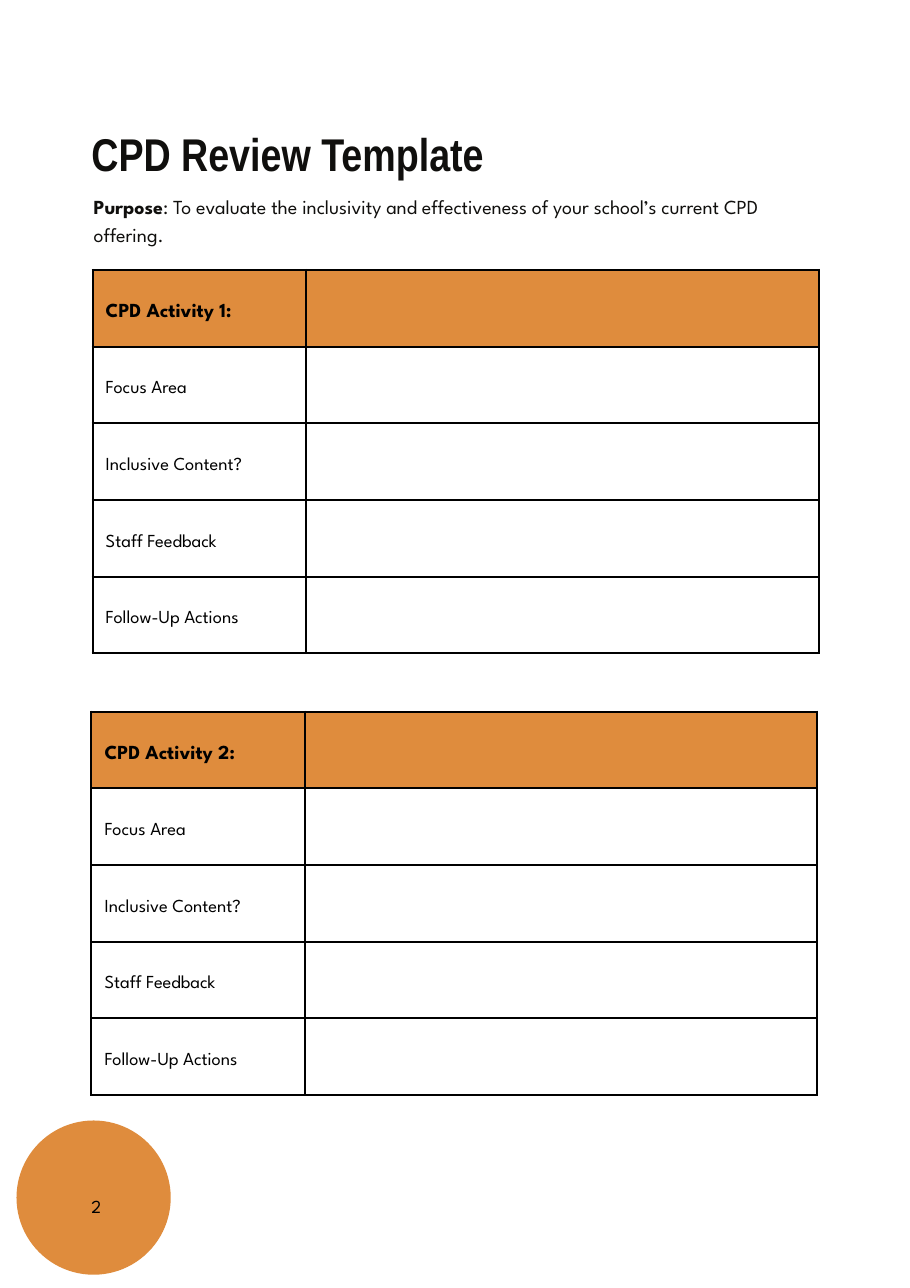
from lxml.etree import SubElement
from pptx import Presentation
from pptx.dml.color import RGBColor
from pptx.enum.shapes import MSO_SHAPE as Shape
from pptx.enum.text import MSO_ANCHOR as Anchor
from pptx.oxml.ns import qn
from pptx.util import Inches, Pt

ORANGE, BLACK, INK = "DF8C3D", "000000", "100F0D"
TITLE_FONT, BODY_FONT = "Arial Narrow", "League Spartan"
REVIEW_ROWS = ["Focus Area", "Inclusive Content?", "Staff Feedback", "Follow-Up Actions"]


def color(value):
    return RGBColor.from_string(value)


class ReviewPage:
    column_widths = (1.94, 4.65)
    table_height = 3.48
    cell_margin = 0.12
    border_width = 1.5

    def __init__(self, slide):
        self.slide = slide

    def style(self, paragraph, size, spacing, font=BODY_FONT, ink=BLACK, bold=None):
        paragraph.line_spacing = Pt(spacing)
        paragraph.font.name = font
        paragraph.font.size = Pt(size)
        paragraph.font.color.rgb = color(ink)
        paragraph.font.bold = bold

    def text(self, box, runs, size, spacing, **style):
        """Runs are pairs of wording and bold."""
        shape = self.slide.shapes.add_textbox(*map(Inches, box))
        frame = shape.text_frame
        frame.word_wrap = True
        frame.margin_left = frame.margin_right = 0
        frame.margin_top = frame.margin_bottom = 0
        paragraph = frame.paragraphs[0]
        self.style(paragraph, size, spacing, **style)
        for wording, bold in runs:
            run = paragraph.add_run()
            run.text = wording
            run.font.bold = bold

    def circle(self, left, top, size):
        shape = self.slide.shapes.add_shape(
            Shape.OVAL, Inches(left), Inches(top), Inches(size), Inches(size))
        shape.shadow.inherit = False
        shape.fill.solid()
        shape.fill.fore_color.rgb = color(ORANGE)
        shape.line.fill.background()

    def borders(self, cell):
        properties = cell._tc.get_or_add_tcPr()
        for side in ("L", "R", "T", "B"):
            line = SubElement(properties, qn(f"a:ln{side}"), w=str(Pt(self.border_width)))
            fill = SubElement(line, qn("a:solidFill"))
            SubElement(fill, qn("a:srgbClr"), val=BLACK)

    def table(self, left, top, heading):
        labels = [heading] + REVIEW_ROWS
        table = self.slide.shapes.add_table(
            len(labels), len(self.column_widths), Inches(left), Inches(top),
            Inches(sum(self.column_widths)), Inches(self.table_height)).table
        table.horz_banding = False
        for column, width in zip(table.columns, self.column_widths):
            column.width = Inches(width)
        for index, label in enumerate(labels):
            is_heading = index == 0
            table.rows[index].height = Inches(self.table_height / len(labels))
            for cell in table.rows[index].cells:
                self.borders(cell)
                cell.vertical_anchor = Anchor.MIDDLE
                cell.margin_left = cell.margin_right = Inches(self.cell_margin)
                cell.margin_top = cell.margin_bottom = Inches(self.cell_margin)
                if is_heading:
                    cell.fill.solid()
                    cell.fill.fore_color.rgb = color(ORANGE)
                else:
                    cell.fill.background()
            label_cell = table.cell(index, 0)
            label_cell.text = label
            size, spacing = (13, 18.2) if is_heading else (12, 16.8)
            self.style(label_cell.text_frame.paragraphs[0], size, spacing, bold=is_heading)


def main():
    presentation = Presentation()
    presentation.slide_width = Inches(8.26)
    presentation.slide_height = Inches(11.69)
    page = ReviewPage(presentation.slides.add_slide(presentation.slide_layouts[6]))

    # Title and purpose
    page.text((0.83, 1.22, 6.42, 0.45), [("CPD Review Template", True)], 30, 30,
              font=TITLE_FONT, ink=INK)
    page.text((0.85, 1.73, 6.42, 0.53), [
        ("Purpose", True),
        (": To evaluate the inclusivity and effectiveness of your school’s "
         "current CPD offering.", False),
    ], 13, 18.2, ink=INK)

    # Activity tables
    page.table(0.84, 2.45, "CPD Activity 1:")
    page.table(0.83, 6.46, "CPD Activity 2:")

    # Page number
    page.circle(0.15, 10.17, 1.4)
    page.text((0.83, 10.81, 1.4, 0.25), [("2", False)], 12, 16.8)

    presentation.save("out.pptx")


if __name__ == "__main__":
    main()
